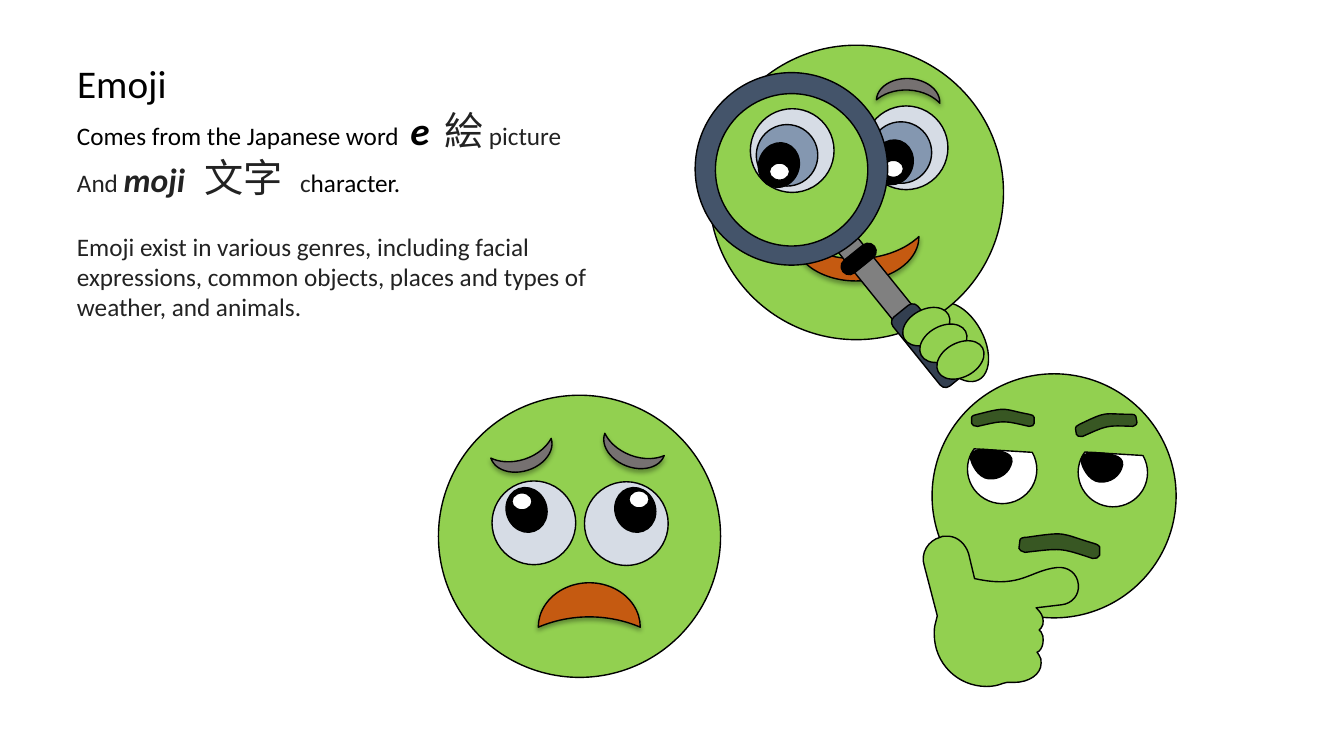
from dataclasses import dataclass

from lxml import etree
from pptx import Presentation
from pptx.dml.color import RGBColor
from pptx.enum.shapes import MSO_SHAPE
from pptx.enum.text import MSO_ANCHOR, MSO_AUTO_SIZE, PP_ALIGN
from pptx.oxml.ns import qn
from pptx.util import Cm, Pt

OVAL, MOON = MSO_SHAPE.OVAL, MSO_SHAPE.MOON
CHORD, ROUNDED = MSO_SHAPE.CHORD, MSO_SHAPE.ROUNDED_RECTANGLE
TOP, LEFT, NO_FIT = MSO_ANCHOR.TOP, PP_ALIGN.LEFT, MSO_AUTO_SIZE.NONE
TITLE_ONLY = 5
GRID = Cm(0.0254)  # one unit of the outlines below


@dataclass(frozen=True)
class Theme:
    font: str = "Calibri"
    title: int = 28
    strong: int = 24
    body: int = 18
    outline: int = 1
    black: str = "000000"
    text: str = "222222"
    white: str = "FFFFFF"
    skin: str = "92D050"
    eye: str = "D6DCE5"
    iris: str = "8497B0"
    brow: str = "767171"
    dark_brow: str = "385723"
    mouth: str = "C55A11"
    ring: str = "44546A"
    handle: str = "808080"
    grip: str = "333F50"


T = Theme()

# Each outline is a start point, then lines (2 numbers) and Bézier curves (6).
PUPIL = [(963, 454), (962, 449, 968, 445, 979, 446), (990, 447, 1005, 448, 1004, 458),
         (1002, 469, 992, 476, 981, 475), (970, 474, 963, 459, 963, 454)]
LEFT_BROW = [(964, 414), (964, 413, 967, 411, 970, 411), (1001, 403, 994, 406, 1021, 411),
             (1024, 411, 1026, 413, 1026, 414), (1026, 420),
             (1026, 422, 1024, 423, 1021, 423), (995, 417, 996, 417, 970, 423),
             (967, 423, 964, 422, 964, 420), (964, 414)]
RIGHT_BROW = [(1067, 425), (1067, 424, 1068, 422, 1071, 421),
              (1100, 407, 1094, 411, 1121, 411), (1124, 411, 1127, 411, 1127, 413),
              (1128, 419), (1129, 420, 1127, 422, 1124, 423),
              (1097, 422, 1099, 422, 1074, 433), (1071, 433, 1068, 433, 1068, 431),
              (1067, 425)]
FLAT_MOUTH = [(1012, 536), (1012, 534, 1015, 533, 1019, 533),
              (1060, 527, 1051, 529, 1085, 539), (1089, 540, 1092, 542, 1091, 544),
              (1091, 551), (1090, 553, 1087, 555, 1084, 554),
              (1051, 543, 1053, 544, 1017, 548), (1014, 547, 1011, 546, 1011, 544),
              (1012, 536)]
HAND = [(937, 532), (939, 532, 940, 532, 942, 532), (951, 533, 958, 540, 961, 549),
        (967, 574), (972, 575), (1014, 583, 1022, 566, 1049, 563),
        (1060, 562, 1069, 569, 1070, 580), (1071, 590, 1064, 599, 1053, 600),
        (1028, 603), (1030, 605), (1033, 608, 1035, 612, 1035, 616),
        (1035, 618, 1035, 621, 1033, 623), (1031, 625), (1033, 627),
        (1035, 630, 1035, 632, 1035, 635), (1035, 639, 1034, 643, 1031, 646),
        (1029, 647), (1031, 650), (1033, 652, 1033, 655, 1033, 658),
        (1033, 669, 1021, 677, 1006, 677), (1004, 677, 1003, 677, 1001, 677),
        (999, 677), (995, 678), (990, 680, 985, 681, 979, 681),
        (950, 681, 927, 658, 927, 629), (927, 626, 927, 622, 928, 619),
        (930, 611), (917, 561), (913, 549, 921, 536, 933, 533),
        (934, 532, 936, 532, 937, 532)]


class EmojiSlide:
    def __init__(self, prs, theme):
        self.theme = theme
        self.slide = prs.slides.add_slide(prs.slide_layouts[TITLE_ONLY])
        self.shapes = self.slide.shapes

    def group(self):
        """Send the following shapes to a new group."""
        self.shapes = self.slide.shapes.add_group_shape().shapes

    def place(self, sp, x, y, w, h):
        sp.left, sp.top, sp.width, sp.height = Cm(x), Cm(y), Cm(w), Cm(h)
        tf = sp.text_frame
        tf.word_wrap, tf.auto_size, tf.vertical_anchor = True, NO_FIT, TOP
        return tf

    def title(self, text, *box):
        tf = self.place(self.slide.shapes.title, *box)
        tf.text = text
        p = tf.paragraphs[0]
        p.alignment = LEFT
        p.font.name, p.font.size = self.theme.font, Pt(self.theme.title)
        p.font.color.rgb = RGBColor.from_string(self.theme.black)

    def text(self, paragraphs, *box):
        """Add paragraphs of (text, size, colour, emphasis) runs."""
        tf = self.place(self.slide.shapes.add_textbox(0, 0, 0, 0), *box)
        for i, runs in enumerate(paragraphs):
            p = tf.add_paragraph() if i else tf.paragraphs[0]
            for text, size, color, emphasis in runs:
                r = p.add_run()
                r.text = text
                r.font.name, r.font.size = self.theme.font, Pt(size)
                r.font.bold = r.font.italic = emphasis
                r.font.color.rgb = RGBColor.from_string(color)
        return tf

    def paint(self, sp, fill):
        sp.shadow.inherit = False
        sp.fill.solid()
        sp.fill.fore_color.rgb = RGBColor.from_string(fill)
        sp.line.color.rgb = RGBColor.from_string(self.theme.black)
        sp.line.width = Pt(self.theme.outline)
        return sp

    def shape(self, kind, fill, x, y, w, h, rot=0, adj=()):
        sp = self.paint(self.shapes.add_shape(kind, Cm(x), Cm(y), Cm(w), Cm(h)), fill)
        sp.rotation = rot
        for i, value in enumerate(adj):
            sp.adjustments[i] = value
        return sp

    def oval(self, fill, x, y, w, h=None, rot=0):
        return self.shape(OVAL, fill, x, y, w, h or w, rot)

    def moon(self, fill, x, y, w, h, rot, adj=()):
        """Add a crescent with a soft shadow below it."""
        sp = self.shape(MOON, fill, x, y, w, h, rot, adj)
        effects = sp._element.spPr.find(qn("a:effectLst"))
        shadow = etree.SubElement(effects, qn("a:outerShdw"), blurRad=str(Pt(3.5)),
                                  dist=str(Pt(2.2)), dir="5400000", rotWithShape="0")
        color = etree.SubElement(shadow, qn("a:srgbClr"), val=self.theme.black)
        etree.SubElement(color, qn("a:alpha"), val="32000")

    def outline(self, fill, outline, dx=0, dy=0):
        """Add a freeform, then turn its curved segments into Bézier curves."""
        segments = [[(x * GRID + Cm(dx), y * GRID + Cm(dy))
                     for x, y in zip(seg[::2], seg[1::2])] for seg in outline]
        ends = [seg[-1] for seg in segments]
        builder = self.shapes.build_freeform(*ends[0], scale=1.0)
        builder.add_line_segments(ends[1:], close=True)
        sp = self.paint(builder.convert_to_shape(), fill)
        left, top = (min(values) for values in zip(*ends))
        lines = list(sp._element.iter(qn("a:lnTo")))
        for line, seg in zip(lines, segments[1:]):
            if len(seg) == 3:
                curve = etree.Element(qn("a:cubicBezTo"))
                for x, y in seg:
                    etree.SubElement(curve, qn("a:pt"), x=str(x - left), y=str(y - top))
                line.getparent().replace(line, curve)

    def pupil(self, x, y, rot, glint_x, glint_y):
        self.oval(self.theme.black, x, y, 1.14, 1.02, rot)
        self.oval(self.theme.white, glint_x, glint_y, 0.51, 0.43)

    def wide_eye(self, x, y):
        self.oval(self.theme.eye, x, y, 2.11)
        self.oval(self.theme.iris, x + 0.15, y + 0.4, 1.55)
        self.pupil(x + 0.15, y + 0.91, 289.8, x + 0.48, y + 1.37)


def worried_face(s):
    s.group()
    s.oval(T.skin, 11.05, 9.96, 7.11)
    for x, y, rot in ((12.93, 10.77, 251.9), (15.6, 10.67, 290.6)):
        s.moon(T.brow, x, y, 0.58, 1.6, rot)
    for x, y, pupil_x, glint in ((12.4, 12.12, 12.7, (12.9, 12.42)),
                                 (14.73, 12.14, 15.44, (15.85, 12.37))):
        s.oval(T.eye, x, y, 2.11)
        s.pupil(pupil_x, 12.34, 70.2, *glint)
    s.moon(T.mouth, 14.29, 13.96, 1.12, 2.57, 90, [0.768])


def searching_face(s):
    tilt, hand_tilt = 321.1, 331.6
    s.group()
    s.oval(T.skin, 23.52, 7.54, 1.27, 2.16, hand_tilt)
    s.oval(T.skin, 17.87, 1.14, 7.42)
    s.wide_eye(21.78, 2.67)
    s.moon(T.brow, 22.61, 1.47, 0.58, 1.6, 93)
    s.moon(T.mouth, 21.01, 4.93, 1.12, 3.18, 270)
    s.shape(ROUNDED, T.handle, 22.1, 5.23, 0.61, 4.45, tilt)
    s.oval(T.ring, 17.52, 1.83, 4.85, rot=tilt)
    s.shape(ROUNDED, T.black, 21.13, 6.32, 1.02, 0.41, tilt, [0.5])
    s.shape(ROUNDED, T.grip, 23.01, 7.59, 0.81, 2.24, tilt, [0.214])
    s.oval(T.skin, 18.03, 2.36, 3.84, rot=tilt)
    s.wide_eye(18.91, 2.74)
    for i in range(3):
        s.oval(T.skin, 22.71 + 0.43 * i, 7.8 + 0.42 * i, 1.27, 0.86, hand_tilt)


def thinking_face(s):
    s.group()
    s.oval(T.skin, 23.49, 9.42, 6.15)
    for dx, dy in ((0, 0), (2.79, 0.08)):
        s.shape(CHORD, T.white, 24.39 + dx, 10.95 + dy, 1.73, 1.75, 285.6, [27, 174.33])
        s.outline(T.black, PUPIL, dx, dy)
    for feature in (LEFT_BROW, RIGHT_BROW, FLAT_MOUTH):
        s.outline(T.dark_brow, feature)
    s.outline(T.skin, HAND)


def main():
    prs = Presentation()
    prs.slide_width, prs.slide_height = Cm(33.87), Cm(19.05)
    s = EmojiSlide(prs, T)
    s.title("Emoji", 1.69, 1.37, 14.05, 1.2)
    tf = s.text([
        [("Comes from the Japanese word  ", T.body, T.black, False),
         ("e ", T.title, T.black, True), (" ", T.body, T.black, False),
         ("絵", T.title, T.text, False), (" picture", T.body, T.text, False)],
        [("And ", T.body, T.text, False), ("moji ", T.strong, T.text, True),
         ("  ", T.body, T.text, False), ("文字  ", T.title, T.text, False),
         ("c", T.body, T.text, False), ("haracter.", T.body, T.black, False)],
        [("Emoji exist in various genres, including facial expressions, common objects, "
          "places and types of weather, and animals.", T.body, T.text, False)],
    ], 1.69, 2.55, 14.05, 5.73)
    tf.paragraphs[2].space_before = Pt(22)
    worried_face(s)
    searching_face(s)
    thinking_face(s)
    prs.save("out.pptx")


if __name__ == "__main__":
    main()
